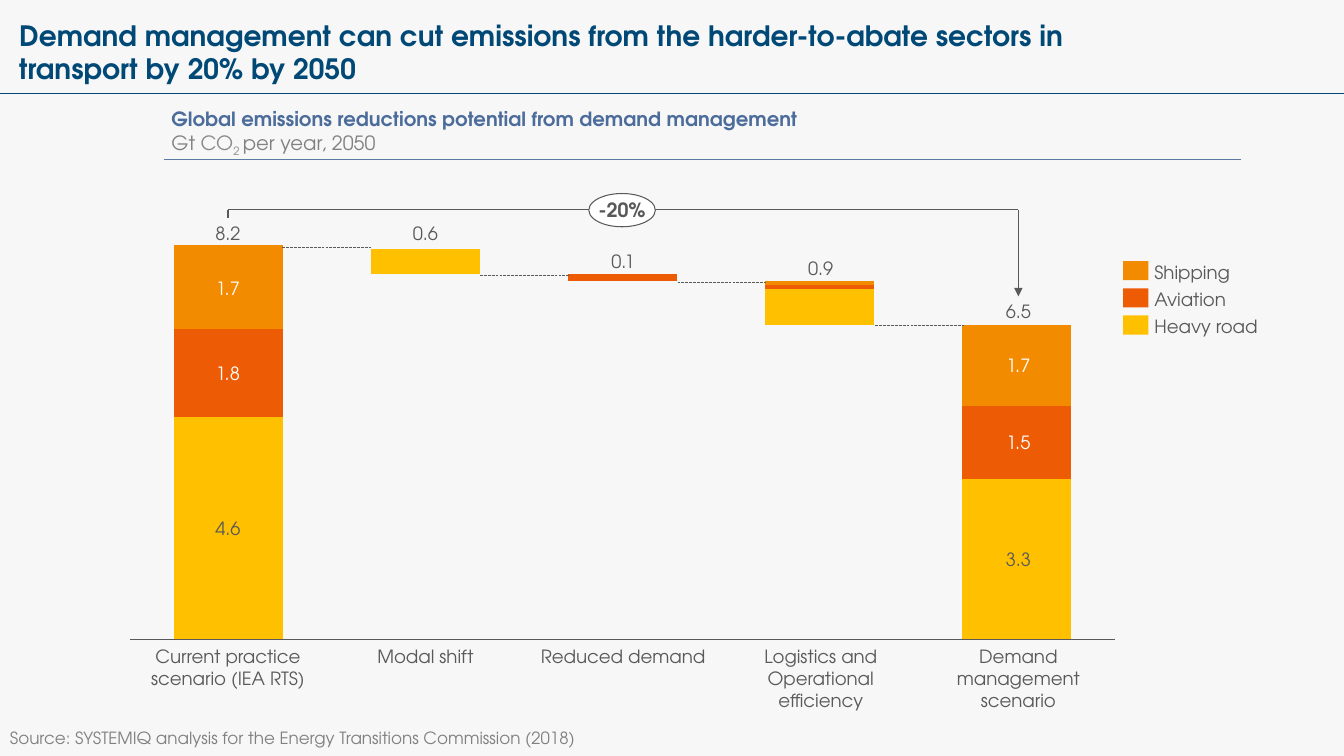
from lxml import etree
from pptx import Presentation
from pptx.chart.data import CategoryChartData
from pptx.dml.color import RGBColor
from pptx.enum.chart import XL_CHART_TYPE, XL_TICK_LABEL_POSITION, XL_TICK_MARK
from pptx.enum.dml import MSO_LINE
from pptx.enum.shapes import MSO_CONNECTOR, MSO_SHAPE
from pptx.enum.text import MSO_ANCHOR, PP_ALIGN
from pptx.oxml import parse_xml
from pptx.oxml.ns import nsdecls, qn
from pptx.util import Inches, Pt

FONT = "TeX Gyre Adventor"
BACKGROUND = RGBColor(0xF7, 0xF7, 0xF7)
NAVY = RGBColor(0x00, 0x48, 0x76)
BLUE = RGBColor(0x4C, 0x6C, 0x9B)
RULE_BLUE = RGBColor(0x5C, 0x79, 0xA3)
INK = RGBColor(0x59, 0x59, 0x59)
GREY = RGBColor(0x80, 0x80, 0x80)
LIGHT_GREY = RGBColor(0x8A, 0x8A, 0x8A)
WHITE = RGBColor(0xFF, 0xFF, 0xFF)
HEAVY_ROAD = RGBColor(0xFF, 0xC0, 0x00)
AVIATION = RGBColor(0xED, 0x5C, 0x05)
SHIPPING = RGBColor(0xF3, 0x8B, 0x00)

SLIDE_WIDTH, SLIDE_HEIGHT = 13.33, 7.5
FIRST_CENTRE, COLUMN_STEP, BAR_WIDTH = 2.26, 1.96, 1.08
LABEL_WIDTH, LABEL_HEIGHT, CATEGORY_WIDTH = 0.3, 0.22, 1.7
BRACKET_TOP = 2.08
LEGEND_TOP, LEGEND_STEP = 2.59, 0.27

BODY = {"size": Pt(13), "color": INK}
BODY_WHITE = {"size": Pt(13), "color": WHITE}

# Each column: category lines, total, height of the bar's top
COLUMNS = [
    (["Current practice scenario (IEA RTS)"], "8.2", 2.45),
    (["Modal shift"], "0.6", 2.45),
    (["Reduced demand"], "0.1", 2.73),
    (["Logistics and", "Operational", "efficiency"], "0.9", 2.8),
    (["Demand management", "scenario"], "6.5", 3.23),
]
# Each segment label: column, text, top, format
SEGMENT_LABELS = [
    (0, "1.7", 2.75, BODY_WHITE), (0, "1.8", 3.59, BODY_WHITE), (0, "4.6", 5.13, BODY),
    (4, "1.7", 3.51, BODY_WHITE), (4, "1.5", 4.28, BODY_WHITE), (4, "3.3", 5.44, BODY),
]
# Each series: values, colour of the middle bars, colour of the end bars
SERIES = [
    ((61, 100, 98, 86, 44), None, HEAVY_ROAD),
    ((24, 7, 0, 10, 20), HEAVY_ROAD, AVIATION),
    ((23, 0, 2, 1, 22), AVIATION, SHIPPING),
    ((None, 0, 0, 1, None), SHIPPING, None),
]
LEGEND = [("Shipping", SHIPPING), ("Aviation", AVIATION), ("Heavy road", HEAVY_ROAD)]


def centre(column):
    return FIRST_CENTRE + column * COLUMN_STEP


def set_attributes(target, values):
    for name, value in values.items():
        setattr(target, name, value)


def format_font(font, values):
    font.name = FONT
    font.color.rgb = values["color"]
    set_attributes(font, {name: value for name, value in values.items() if name != "color"})


def write_text(shape, paragraphs, align=PP_ALIGN.LEFT, anchor=MSO_ANCHOR.TOP, wrap=False,
               inset=(0, 0, 0, 0)):
    """Fill a shape with paragraphs, each a list of (text, format, baseline) runs."""
    frame = shape.text_frame
    left, top, right, bottom = map(Inches, inset)
    set_attributes(frame, {
        "word_wrap": wrap, "vertical_anchor": anchor, "margin_left": left,
        "margin_top": top, "margin_right": right, "margin_bottom": bottom,
    })
    for index, runs in enumerate(paragraphs):
        paragraph = frame.add_paragraph() if index else frame.paragraphs[0]
        paragraph.alignment = align
        for text, values, baseline in runs:
            run = paragraph.add_run()
            run.text = text
            format_font(run.font, values)
            if baseline:
                run.font._element.set("baseline", str(baseline))


def add_text(slide, box, lines, values, **layout):
    shape = slide.shapes.add_textbox(*map(Inches, box))
    write_text(shape, [[(line, values, 0)] for line in lines], **layout)


def add_line(slide, start, end, color=INK, width=0.75, dash=None, arrow=False):
    line = slide.shapes.add_connector(
        MSO_CONNECTOR.STRAIGHT, *map(Inches, (*start, *end)))
    line.line.color.rgb = color
    line.line.width = Pt(width)
    if dash:
        line.line.dash_style = dash
    if arrow:
        etree.SubElement(line.line._get_or_add_ln(), qn("a:tailEnd"), type="triangle")
    etree.SubElement(line._element.spPr, qn("a:effectLst"))


def add_filled_shape(slide, kind, box, fill, outline=None):
    shape = slide.shapes.add_shape(kind, *map(Inches, box))
    shape.shadow.inherit = False
    shape.fill.solid()
    shape.fill.fore_color.rgb = fill
    if outline:
        shape.line.color.rgb = outline
        shape.line.width = Pt(0.75)
    else:
        shape.line.fill.background()
    return shape


def paint(format, color):
    if color is None:
        format.fill.background()
    else:
        format.fill.solid()
        format.fill.fore_color.rgb = color


def add_waterfall(slide):
    data = CategoryChartData()
    data.categories = ["1", "2", "3", "4", "5"]
    for number, (values, _, _) in enumerate(SERIES, 1):
        data.add_series(f"Series {number}", values)
    chart = slide.shapes.add_chart(
        XL_CHART_TYPE.COLUMN_STACKED, *map(Inches, (1.19, 2.2, 9.97, 4.23)), data).chart
    set_attributes(chart, {"has_legend": False, "has_title": False})
    format_font(chart.font, {"size": Pt(10), "color": INK})

    plot = chart.plots[0]
    set_attributes(plot, {"gap_width": 80, "overlap": 100, "vary_by_categories": False})
    for series, (_, middle_color, end_color) in zip(plot.series, SERIES):
        paint(series.format, middle_color)
        if end_color:
            for column in (0, len(COLUMNS) - 1):
                paint(series.points[column].format, end_color)

    no_ticks = {"major_tick_mark": XL_TICK_MARK.NONE, "minor_tick_mark": XL_TICK_MARK.NONE}
    set_attributes(chart.category_axis, {
        **no_ticks, "tick_label_position": XL_TICK_LABEL_POSITION.NONE})
    chart.category_axis.format.line.color.rgb = INK
    chart.category_axis.format.line.width = Pt(0.75)
    set_attributes(chart.value_axis, {
        **no_ticks, "minimum_scale": 0, "maximum_scale": 112,
        "has_major_gridlines": False, "visible": False})

    plot_area = chart._chartSpace.chart.plotArea
    for layout in plot_area.findall(qn("c:layout")):
        plot_area.remove(layout)
    places = {"x": 0.01, "y": 0.02, "w": 0.98, "h": 0.96}
    plot_area.insert(0, parse_xml(
        f'<c:layout {nsdecls("c")}><c:manualLayout><c:layoutTarget val="inner"/>'
        '<c:xMode val="edge"/><c:yMode val="edge"/>'
        + "".join(f'<c:{name} val="{share}"/>' for name, share in places.items())
        + "</c:manualLayout></c:layout>"))


def add_value_label(slide, column, text, top, values, anchor):
    box = (centre(column) - LABEL_WIDTH / 2, top, LABEL_WIDTH, LABEL_HEIGHT)
    add_text(slide, box, [text], values, align=PP_ALIGN.CENTER, anchor=anchor)


def add_column_labels(slide):
    for column, (category, total, top) in enumerate(COLUMNS):
        if column:
            add_line(slide, (centre(column - 1) + BAR_WIDTH / 2, top),
                     (centre(column) - BAR_WIDTH / 2, top), width=0.25, dash=MSO_LINE.LONG_DASH)
        add_value_label(slide, column, total, top - 0.25, BODY, MSO_ANCHOR.BOTTOM)
        add_text(slide, (centre(column) - CATEGORY_WIDTH / 2, 6.4, CATEGORY_WIDTH, 0.65),
                 category, BODY, align=PP_ALIGN.CENTER, wrap=True)
    for column, text, top, values in SEGMENT_LABELS:
        add_value_label(slide, column, text, top, values, MSO_ANCHOR.MIDDLE)


def add_change_bracket(slide):
    first, last = centre(0), centre(len(COLUMNS) - 1)
    add_line(slide, (first, BRACKET_TOP), (last, BRACKET_TOP), width=1)
    add_line(slide, (last, BRACKET_TOP), (last, 2.94), width=1, arrow=True)
    add_line(slide, (first, 2.16), (first, BRACKET_TOP), width=1)
    oval = add_filled_shape(slide, MSO_SHAPE.OVAL, (5.84, 1.92, 0.66, 0.33), WHITE, INK)
    write_text(oval, [[("-20%", {"size": Pt(14), "color": INK, "bold": True}, 0)]],
               align=PP_ALIGN.CENTER, anchor=MSO_ANCHOR.MIDDLE)


def add_legend(slide):
    for row, (name, color) in enumerate(LEGEND):
        top = LEGEND_TOP + row * LEGEND_STEP
        add_filled_shape(slide, MSO_SHAPE.RECTANGLE, (11.14, top, 0.25, 0.19), color)
        add_text(slide, (11.45, top, 1.03, LABEL_HEIGHT), [name], BODY, anchor=MSO_ANCHOR.MIDDLE)


def add_chart_heading(slide):
    heading = {"size": Pt(14), "color": BLUE, "bold": True}
    unit = {"size": Pt(14), "color": GREY}
    gas = {"size": Pt(14), "color": LIGHT_GREY}
    shape = slide.shapes.add_textbox(*map(Inches, (1.7, 1.09, 10.61, 0.49)))
    write_text(shape, [
        [("Global emissions reductions potential from demand management", heading, 0)],
        [("Gt ", unit, 0), ("CO", gas, 0), ("2 ", gas, -25000), ("per year, 2050", unit, 0)],
    ], anchor=MSO_ANCHOR.BOTTOM, wrap=True, inset=(0, 0, 0, 0.02))
    add_line(slide, (1.63, 1.58), (12.31, 1.58), RULE_BLUE)


def main():
    presentation = Presentation()
    set_attributes(presentation, {
        "slide_width": Inches(SLIDE_WIDTH), "slide_height": Inches(SLIDE_HEIGHT)})
    slide = presentation.slides.add_slide(presentation.slide_layouts[6])
    paint(slide.background, BACKGROUND)
    add_line(slide, (0, 0.93), (SLIDE_WIDTH, 0.93), NAVY)
    add_text(slide, (0.19, 0.18, 10.62, 0.67),
             ["Demand management can cut emissions from the harder-to-abate sectors in "
              "transport by 20% by 2050"],
             {"size": Pt(20), "color": NAVY, "bold": True}, wrap=True)
    add_waterfall(slide)
    add_column_labels(slide)
    add_change_bracket(slide)
    add_legend(slide)
    add_text(slide, (0, 7.17, 12.88, 0.3),
             ["Source: SYSTEMIQ analysis for the Energy Transitions Commission (2018)"],
             {"size": Pt(12), "color": GREY}, wrap=True, inset=(0.1, 0.05, 0.1, 0.05))
    add_chart_heading(slide)
    presentation.save("out.pptx")


if __name__ == "__main__":
    main()
